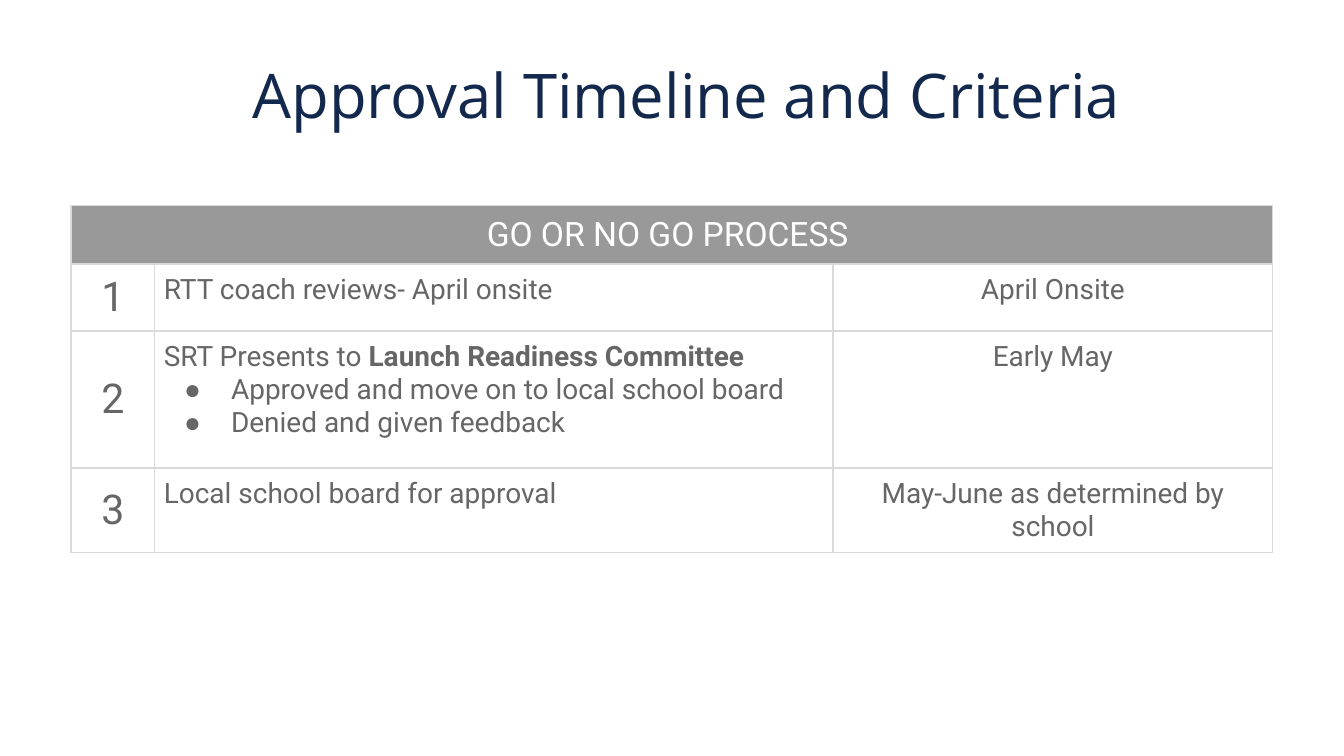
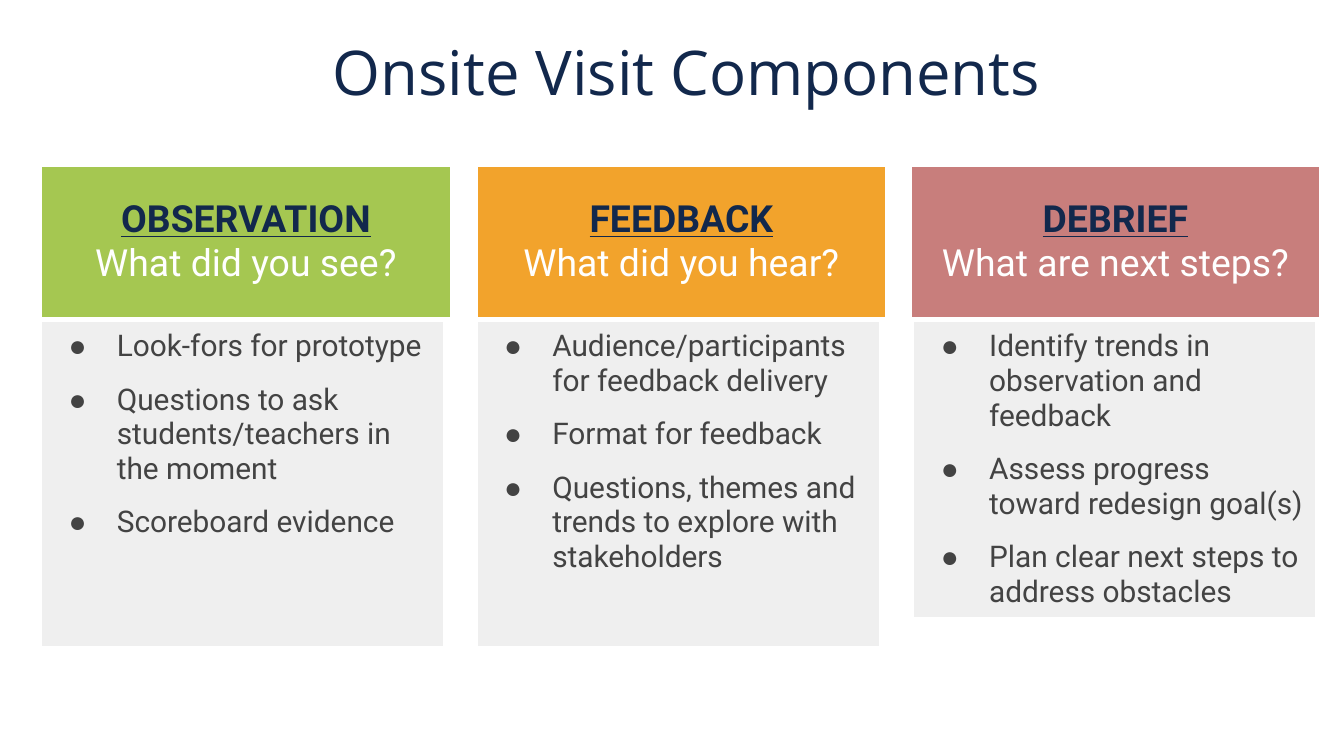
from dataclasses import dataclass

from lxml.etree import SubElement
from pptx import Presentation
from pptx.dml.color import RGBColor
from pptx.enum.text import MSO_ANCHOR, MSO_AUTO_SIZE, PP_ALIGN
from pptx.oxml.ns import qn
from pptx.presentation import Presentation as Deck
from pptx.slide import Slide
from pptx.table import Table, _Cell as Cell
from pptx.text.text import _Paragraph as Para, _Run as Run
from pptx.util import Inches, Pt


@dataclass(frozen=True)
class Theme:
    head: str = "Open Sans"
    body: str = "Roboto"
    mark: str = "Arial"
    navy: str = "12284C"
    white: str = "FFFFFF"
    gray: str = "666666"
    dark: str = "434343"
    band: str = "999999"
    rule: str = "D9D9D9"
    panel: str = "EFEFEF"
    green: str = "A5C751"
    amber: str = "F2A32C"
    rose: str = "C87E7C"
    title: float = 33
    card: float = 20
    banner: float = 18
    item: float = 16
    cell: float = 15
    step: float = 22


@dataclass(frozen=True)
class Line:
    text: str
    size: float
    color: str
    strong: str = ""  # bold words that follow the text
    bold: bool = False
    under: bool = False
    align: PP_ALIGN = PP_ALIGN.LEFT
    hang: float = 0  # bullet indent in inches
    before: float = 0
    after: float = 0


@dataclass(frozen=True)
class Step:
    task: list[Line]
    date: str
    height: float


@dataclass(frozen=True)
class Card:
    name: str
    ask: str
    fill: str
    items: list[str]
    left: float
    height: float
    shift: float = 0  # offset of the list from the heading


THEME = Theme()
MID = PP_ALIGN.CENTER


def task(text: str, strong: str = "", hang: float = 0) -> Line:
    return Line(text, THEME.cell, THEME.gray, strong, hang=hang)


STEPS = [
    Step([task("RTT coach reviews- April onsite")], "April Onsite", 0.5),
    Step(
        [
            task("SRT Presents to", " Launch Readiness Committee"),
            task("Approved and move on to local school board", hang=0.35),
            task("Denied and given feedback", hang=0.35),
        ],
        "Early May",
        1.02,
    ),
    Step([task("Local school board for approval")], "May-June as determined by school", 0.59),
]

CARDS = [
    Card(
        "OBSERVATION",
        "What did you see?",
        THEME.green,
        [
            "Look-fors for prototype",
            "Questions to ask students/teachers in the moment",
            "Scoreboard evidence",
        ],
        0.3,
        2.44,
    ),
    Card(
        "FEEDBACK",
        "What did you hear?",
        THEME.amber,
        [
            "Audience/participants for feedback delivery",
            "Format for feedback",
            "Questions, themes and trends to explore with stakeholders",
        ],
        3.54,
        2.44,
    ),
    Card(
        "DEBRIEF",
        "What are next steps?",
        THEME.rose,
        [
            "Identify trends in observation and feedback",
            "Assess progress toward redesign goal(s)",
            "Plan clear next steps to address obstacles",
        ],
        6.77,
        0.55,
        0.02,
    ),
]


def style(run: Run, font: str, size: float, color: str) -> None:
    run.font.name = font
    run.font.size = Pt(size)
    run.font.color.rgb = RGBColor.from_string(color)


def bullet(para: Para, hang: float, color: str) -> None:
    props = para._p.get_or_add_pPr()
    props.set("marL", str(Inches(0.5)))
    props.set("indent", str(-Inches(hang)))
    tint = SubElement(props, qn("a:buClr"))
    SubElement(tint, qn("a:srgbClr"), val=color)
    SubElement(props, qn("a:buFont"), typeface=THEME.mark)
    SubElement(props, qn("a:buChar"), char="●")


def border(cell: Cell, color: str, width: float) -> None:
    props = cell._tc.get_or_add_tcPr()
    for side in ("lnL", "lnR", "lnT", "lnB"):
        edge = SubElement(props, qn(f"a:{side}"), w=str(Pt(width)))
        fill = SubElement(edge, qn("a:solidFill"))
        SubElement(fill, qn("a:srgbClr"), val=color)


def write(cell: Cell, lines: list[Line], anchor: MSO_ANCHOR = MSO_ANCHOR.TOP) -> None:
    cell.vertical_anchor = anchor
    frame = cell.text_frame
    frame.text = "\n".join(line.text for line in lines)
    for para, line in zip(frame.paragraphs, lines):
        if line.hang:
            bullet(para, line.hang, line.color)
        para.alignment = line.align
        para.space_before = Pt(line.before)
        para.space_after = Pt(line.after)
        para.runs[0].font.bold = line.bold
        para.runs[0].font.underline = line.under
        if line.strong:
            run = para.add_run()
            run.text = line.strong
            run.font.bold = True
        for run in para.runs:
            style(run, THEME.body, line.size, line.color)


def grid(slide: Slide, left: float, top: float, cols: list[float], rows: list[float],
         rule: str, width: float, fill: str = "") -> Table:
    """Add a plain table with even margins and ruled cells."""
    shape = slide.shapes.add_table(
        len(rows), len(cols), Inches(left), Inches(top), Inches(sum(cols)), Inches(sum(rows))
    )
    table = shape.table
    table.first_row = table.horz_banding = False
    for col, size in zip(table.columns, cols):
        col.width = Inches(size)
    for row, size in zip(table.rows, rows):
        row.height = Inches(size)
    for cell in table.iter_cells():
        cell.margin_left = cell.margin_right = Inches(0.07)
        cell.margin_top = cell.margin_bottom = Inches(0.07)
        border(cell, rule, width)
        if fill:
            paint(cell, fill)
        else:
            cell.fill.background()
    return table


def paint(cell: Cell, color: str) -> None:
    cell.fill.solid()
    cell.fill.fore_color.rgb = RGBColor.from_string(color)


def start(deck: Deck, text: str, top: float) -> Slide:
    """Add a slide and set its title."""
    slide = deck.slides.add_slide(deck.slide_layouts[5])
    title = slide.shapes.title
    title.left, title.top = Inches(0.67), Inches(top)
    title.width, title.height = Inches(8.58), Inches(0.64)
    frame = title.text_frame
    frame.text = text
    frame.word_wrap = True
    frame.auto_size = MSO_AUTO_SIZE.NONE
    frame.vertical_anchor = MSO_ANCHOR.BOTTOM
    frame.margin_left, frame.margin_right = Inches(0.4), Inches(0.1)
    frame.margin_top, frame.margin_bottom = Inches(0.1), Inches(0)
    para = frame.paragraphs[0]
    para.alignment = MID
    para.line_spacing = 0.9
    style(para.runs[0], THEME.head, THEME.title, THEME.navy)
    return slide


def plan(deck: Deck) -> None:
    """Build the approval timeline."""
    slide = start(deck, "Approval Timeline and Criteria", 0.34)
    rows = [0.42] + [step.height for step in STEPS]
    table = grid(slide, 0.53, 1.53, [0.62, 5.05, 3.27], rows, THEME.rule, 1)
    top = table.cell(0, 0)
    top.merge(table.cell(0, 2))
    paint(top, THEME.band)
    write(top, [Line("GO OR NO GO PROCESS ", THEME.banner, THEME.white, align=MID)])
    for row, step in enumerate(STEPS, 1):
        count = Line(str(row), THEME.step, THEME.gray, align=MID)
        write(table.cell(row, 0), [count], MSO_ANCHOR.MIDDLE)
        write(table.cell(row, 1), step.task)
        write(table.cell(row, 2), [Line(step.date, THEME.cell, THEME.gray, align=MID)])


def panel(slide: Slide, card: Card) -> None:
    """Draw a card's heading and the list under it."""
    head = grid(slide, card.left, 1.23, [3.06], [1.14], THEME.white, 2.25, card.fill)
    lines = [
        Line(card.name, THEME.card, THEME.navy, bold=True, under=True, align=MID),
        Line(card.ask, THEME.card, THEME.white, align=MID),
    ]
    write(head.cell(0, 0), lines, MSO_ANCHOR.MIDDLE)
    left = card.left + card.shift
    body = grid(slide, left, 2.38, [3.01], [card.height], THEME.white, 2.25, THEME.panel)
    last = len(card.items) - 1
    items = [
        Line(item, THEME.item, THEME.dark, hang=0.36,
             before=10 if spot else 0, after=10 if spot == last else 0)
        for spot, item in enumerate(card.items)
    ]
    write(body.cell(0, 0), items)


def visit(deck: Deck) -> None:
    """Build the three parts of an onsite visit."""
    slide = start(deck, "Onsite Visit Components", 0.17)
    for card in CARDS:
        panel(slide, card)


def main() -> None:
    deck = Presentation()
    deck.slide_width = Inches(10)
    deck.slide_height = deck.slide_width * 9 // 16
    plan(deck)
    visit(deck)
    deck.save("out.pptx")


if __name__ == "__main__":
    main()
